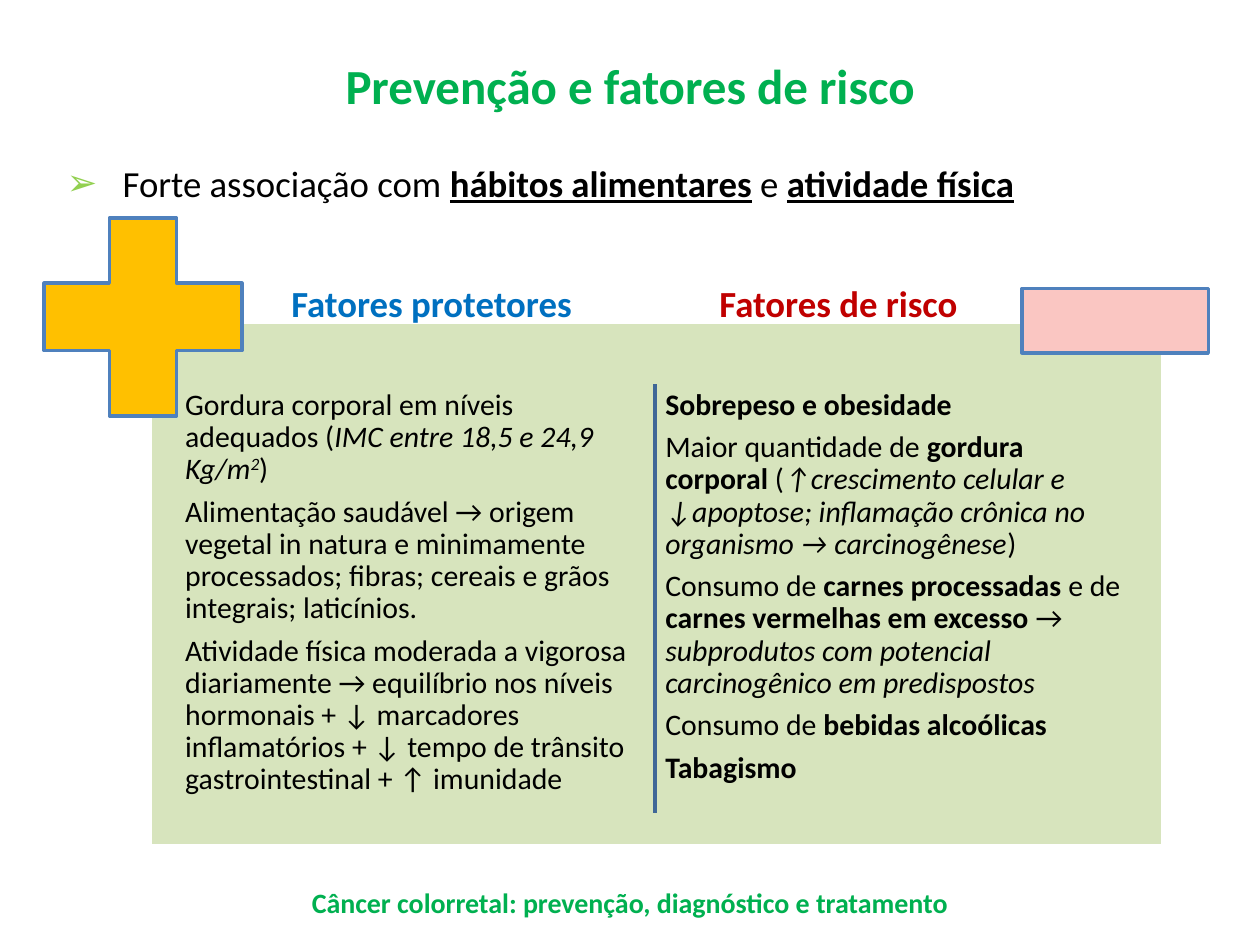
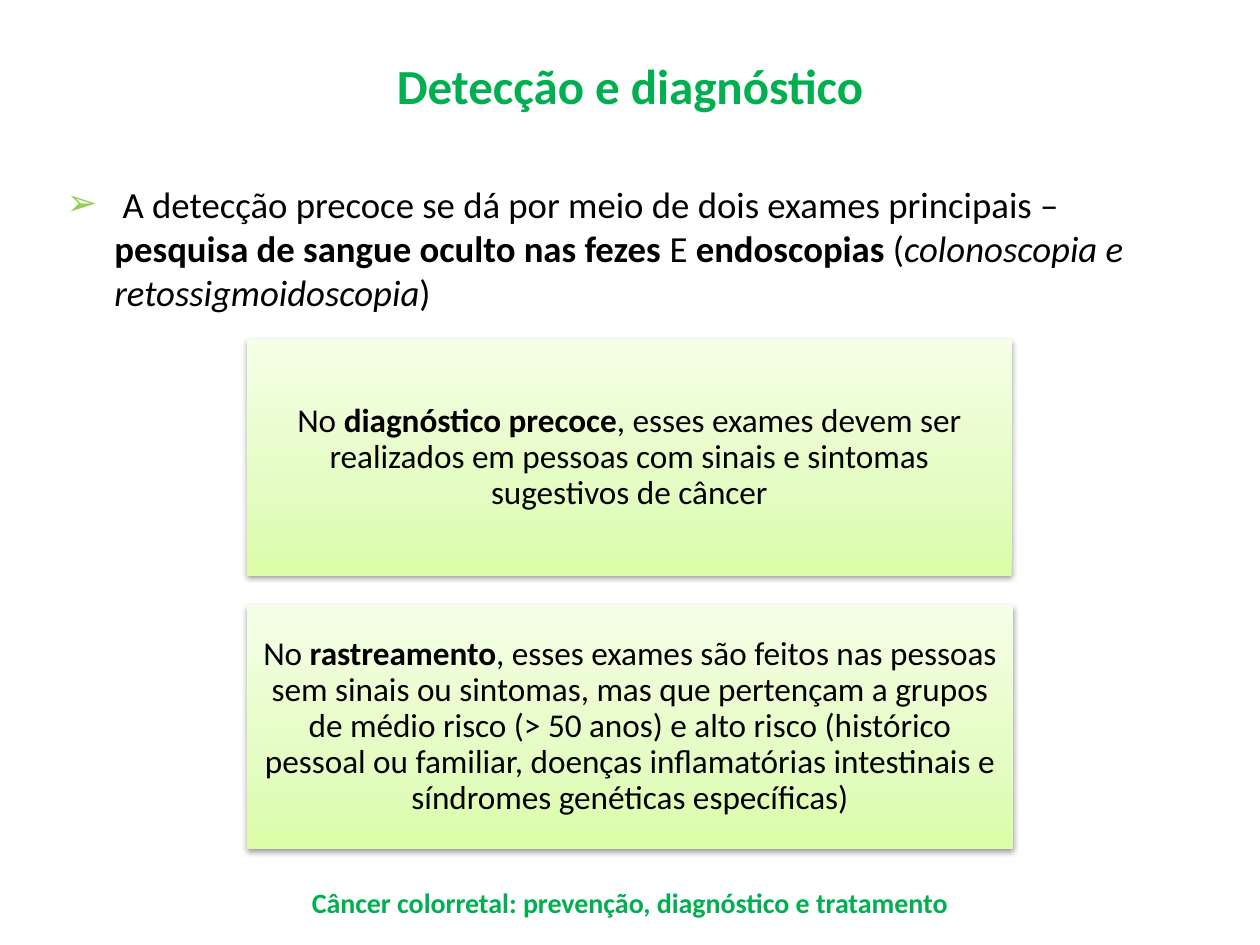
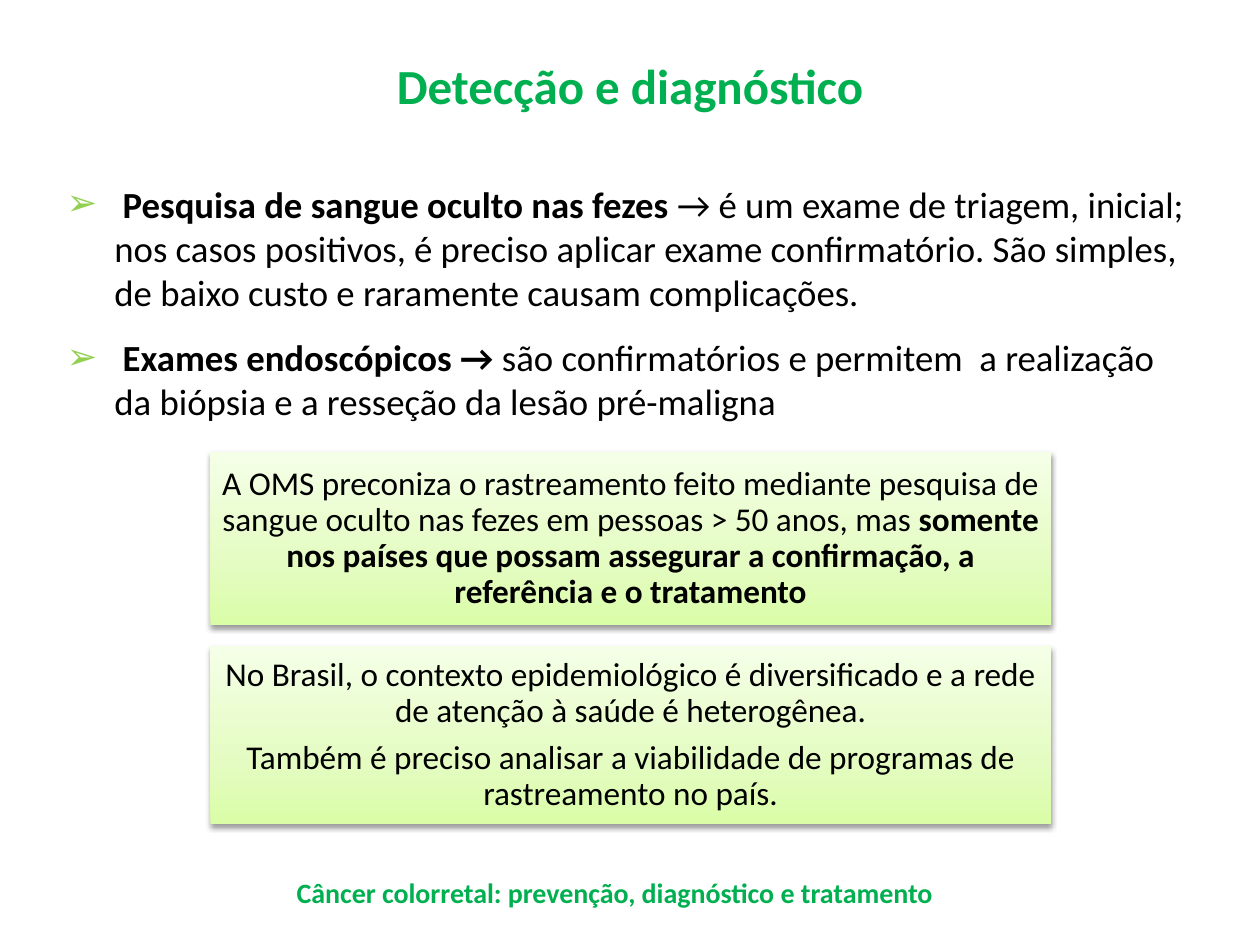
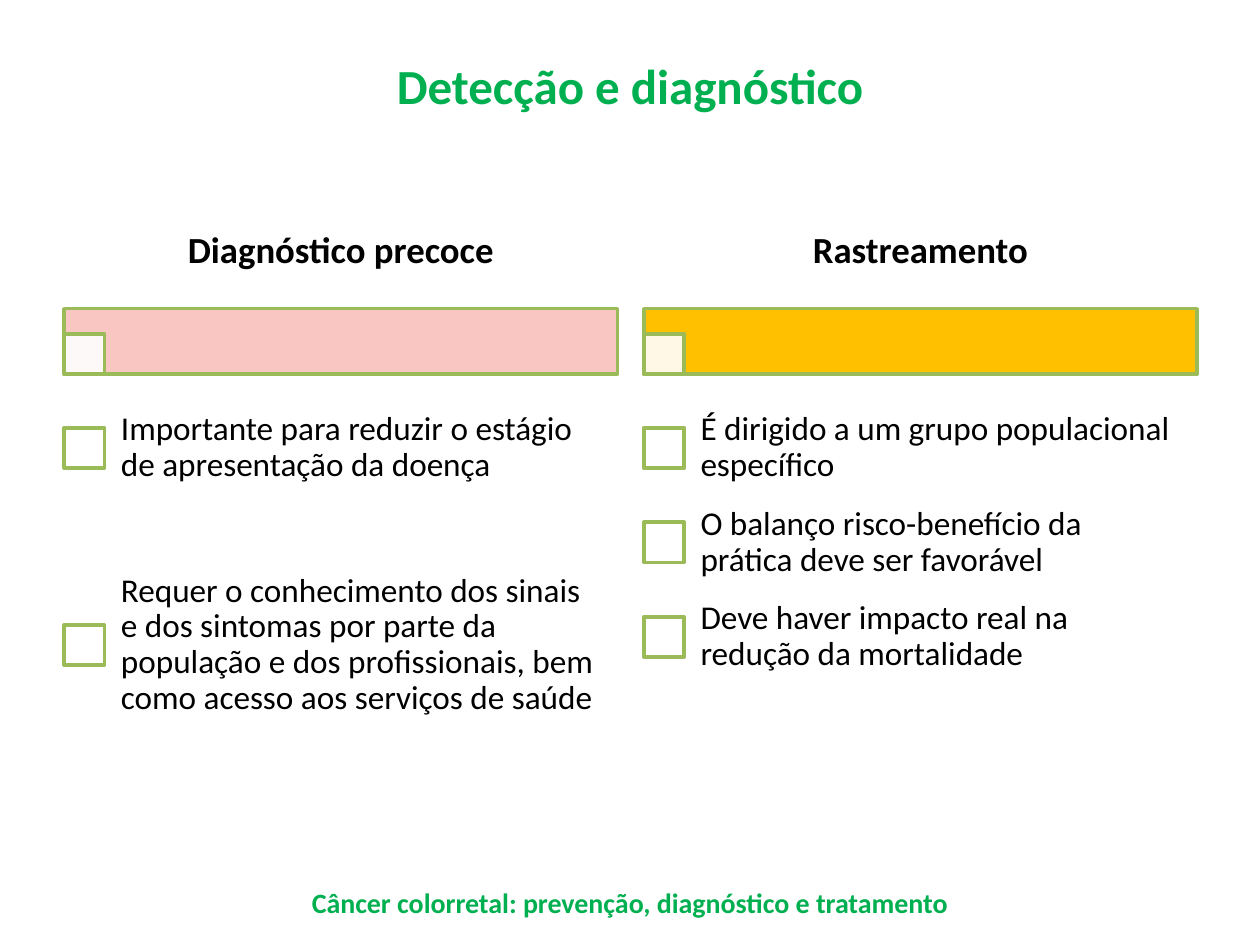
"""Builds four slides on preventing and detecting colorectal cancer."""
from copy import deepcopy

from lxml import etree
from pptx import Presentation
from pptx.dml.color import RGBColor
from pptx.enum import shapes, text
from pptx.oxml.ns import qn
from pptx.util import Inches, Pt

BLACK = RGBColor(0x00, 0x00, 0x00)
WHITE = RGBColor(0xFF, 0xFF, 0xFF)
GREEN = RGBColor(0x00, 0xB0, 0x50)
LIME = RGBColor(0x92, 0xD0, 0x50)
OLIVE = RGBColor(0x9B, 0xBB, 0x59)
SAGE = RGBColor(0xD7, 0xE4, 0xBD)
AMBER = RGBColor(0xFF, 0xC0, 0x00)
PINK = RGBColor(0xFA, 0xC6, 0xC2)
BLUE = RGBColor(0x00, 0x70, 0xC0)
RED = RGBColor(0xC0, 0x00, 0x00)
OUTLINE = RGBColor(0x4F, 0x81, 0xBD)
DIVIDER = RGBColor(0x3F, 0x67, 0x97)
CARD_STOPS = [
    (0, RGBColor(0xDA, 0xFD, 0xA7)),
    (0.35, RGBColor(0xE4, 0xFC, 0xC2)),
    (1, RGBColor(0xF5, 0xFF, 0xE7)),
]
FONT = "Calibri"
FOOTER = "Câncer colorretal: prevenção, diagnóstico e tratamento"
LEFT, CENTER = text.PP_ALIGN.LEFT, text.PP_ALIGN.CENTER
TOP, MIDDLE = text.MSO_ANCHOR.TOP, text.MSO_ANCHOR.MIDDLE
RECTANGLE = shapes.MSO_SHAPE.RECTANGLE


def write(shape, paragraphs, size, color=BLACK, align=LEFT, anchor=TOP,
          inset=(0.1, 0.05), leading=1, bullet=None):
    """Fill a shape with paragraphs of (words, style letters) runs."""
    frame = shape.text_frame
    frame.word_wrap = True
    frame.vertical_anchor = anchor
    frame.margin_left = frame.margin_right = Inches(inset[0])
    frame.margin_top = frame.margin_bottom = Inches(inset[1])
    for index, runs in enumerate(paragraphs):
        paragraph = frame.add_paragraph() if index else frame.paragraphs[0]
        paragraph.alignment = align
        paragraph.line_spacing = leading
        paragraph.space_after = Pt(6)
        if bullet:
            if index:
                paragraph.space_before = Pt(6)
            properties = paragraph._p.get_or_add_pPr()
            properties.set("marL", str(Inches(0.38)))
            properties.set("indent", str(-Inches(0.38)))
            bullet_color = etree.SubElement(properties, qn("a:buClr"))
            etree.SubElement(bullet_color, qn("a:srgbClr"), val=str(LIME))
            etree.SubElement(properties, qn("a:buFont"), typeface="Wingdings" if bullet == "Ø" else FONT)
            etree.SubElement(properties, qn("a:buChar"), char=bullet)
        paragraph.font.name = FONT
        paragraph.font.size = Pt(size)
        paragraph.font.color.rgb = color
        all_bold = all("b" in style for _, style in runs)
        paragraph.font.bold = all_bold
        for words, style in runs:
            run = paragraph.add_run()
            run.text = words
            if "b" in style and not all_bold:
                run.font.bold = True
            if "i" in style:
                run.font.italic = True
            if "u" in style:
                run.font.underline = True
            if "^" in style:
                run._r.get_or_add_rPr().set("baseline", "30000")


def block(slide, box, fill, line=None, preset=RECTANGLE):
    """Add a flat shape with a plain fill and an optional outline."""
    shape = slide.shapes.add_shape(preset, *map(Inches, box))
    shape.shadow.inherit = False
    shape.fill.solid()
    shape.fill.fore_color.rgb = fill
    if line is None:
        shape.line.fill.background()
    else:
        shape.line.color.rgb = line
        shape.line.width = Pt(2)
    return shape


deck = Presentation()
deck.slide_width, deck.slide_height = Inches(10), Inches(7.5)

pages = []
for heading, footer_left, footer_top in [
    ("Prevenção e fatores de risco", 0.12, 6.98),
    ("Detecção e diagnóstico", 0.12, 6.98),
    ("Detecção e diagnóstico", 0, 6.9),
    ("Detecção e diagnóstico", 0.12, 6.98),
]:
    page = deck.slides.add_slide(deck.slide_layouts[6])
    title = page.shapes.add_textbox(Inches(0.5), Inches(0.05), Inches(9), Inches(1.25))
    write(title, [[(heading, "b")]], 28, GREEN, CENTER, MIDDLE)
    footer = page.shapes.add_textbox(
        Inches(footer_left), Inches(footer_top), Inches(9.76), Inches(0.44))
    write(footer, [[(FOOTER, "b")]], 16, GREEN, CENTER)
    pages.append(page)
factors, exams, screening, comparison = pages

for page, top, height, points in [
    (factors, 1.23, 0.5, [
        [(" Forte associação com ", ""), ("hábitos alimentares", "bu"), (" e ", ""),
         ("atividade física", "bu")],
    ]),
    (exams, 1.39, 1.42, [
        [(" A detecção precoce se dá por meio de dois exames principais – ", ""),
         ("pesquisa de sangue oculto nas fezes", "b"), (" E ", ""), ("endoscopias", "b"),
         (" (", ""), ("colonoscopia e retossigmoidoscopia", "i"), (")", "")],
    ]),
    (screening, 1.39, 2.28, [
        [(" Pesquisa de sangue oculto nas fezes ", "b"),
         ("→ é um exame de triagem, inicial; nos casos positivos, é preciso aplicar exame "
          "confirmatório. São simples, de baixo custo e raramente causam complicações.", "")],
        [(" Exames endoscópicos →", "b"),
         (" são confirmatórios e permitem  a realização da biópsia e a resseção da lesão "
          "pré-maligna", "")],
    ]),
]:
    body = page.shapes.add_textbox(Inches(0.43), Inches(top), Inches(9.13), Inches(height))
    write(body, points, 21, bullet="➢")

block(factors, (1.19, 2.56, 8.04, 4.15), SAGE, WHITE)
protective = [
    [("Gordura corporal em níveis adequados (", ""), ("IMC entre 18,5 e 24,9 Kg/m", "i"),
     ("2", "i^"), (")", "")],
    [("Alimentação saudável → origem vegetal in natura e minimamente processados; fibras; "
      "cereais e grãos integrais; laticínios.", "")],
    [("Atividade física moderada a vigorosa diariamente → equilíbrio nos níveis hormonais + "
      "↓ marcadores inflamatórios + ↓ tempo de trânsito gastrointestinal + ↑ imunidade", "")],
]
risky = [
    [("Sobrepeso e obesidade", "b")],
    [("Maior quantidade de ", ""), ("gordura corporal", "b"), (" (", ""),
     ("↑crescimento celular e ↓apoptose; inflamação crônica no organismo → carcinogênese", "i"),
     (")", "")],
    [("Consumo de ", ""), ("carnes processadas", "b"), (" e de ", ""),
     ("carnes vermelhas em excesso ", "b"), ("→ ", ""),
     ("subprodutos com potencial carcinogênico em predispostos", "i")],
    [("Consumo de ", ""), ("bebidas alcoólicas", "b")],
    [("Tabagismo", "b")],
]
for label, color, label_left, list_left, items in [
    ("Fatores protetores", BLUE, 1.85, 1.43, protective),
    ("Fatores de risco", RED, 5.08, 5.24, risky),
]:
    label_box = factors.shapes.add_textbox(
        Inches(label_left), Inches(2.18), Inches(3.15), Inches(0.55))
    write(label_box, [[(label, "b")]], 21, color, CENTER)
    item_box = factors.shapes.add_textbox(
        Inches(list_left), Inches(3.05), Inches(3.73), Inches(3.55))
    write(item_box, items, 17, inset=(0.04, 0.04), leading=0.9)

plus = block(factors, (0.35, 1.73, 1.57, 1.57), AMBER, OUTLINE, shapes.MSO_SHAPE.CROSS)
plus.adjustments[0] = 0.33
block(factors, (8.11, 2.29, 1.48, 0.51), PINK, OUTLINE)
divider = factors.shapes.add_connector(
    shapes.MSO_CONNECTOR.STRAIGHT, Inches(5.2), Inches(3.05), Inches(5.2), Inches(6.45))
divider.line.color.rgb = DIVIDER
divider.line.width = Pt(2)
etree.SubElement(divider._element.spPr, qn("a:effectLst"))

for page, box, message in [
    (exams, (1.96, 2.69, 6.07, 1.88), [
        [("No ", ""), ("diagnóstico precoce", "b"),
         (", esses exames devem ser realizados em pessoas com sinais e sintomas sugestivos "
          "de câncer", "")],
    ]),
    (exams, (1.96, 4.8, 6.08, 1.94), [
        [("No ", ""), ("rastreamento", "b"),
         (", esses exames são feitos nas pessoas sem sinais ou sintomas, mas que pertençam a "
          "grupos de médio risco (> 50 anos) e alto risco (histórico pessoal ou familiar, "
          "doenças inflamatórias intestinais e síndromes genéticas específicas)", "")],
    ]),
    (screening, (1.67, 3.59, 6.67, 1.37), [
        [("A OMS preconiza o rastreamento feito mediante pesquisa de sangue oculto nas fezes "
          "em pessoas > 50 anos, mas ", ""),
         ("somente nos países que possam assegurar a confirmação, a referência e o "
          "tratamento", "b")],
    ]),
    (screening, (1.67, 5.13, 6.67, 1.41), [
        [("No Brasil, o contexto epidemiológico é diversificado e a rede de atenção à saúde é "
          "heterogênea.", "")],
        [("Também é preciso analisar a viabilidade de programas de rastreamento no país.", "")],
    ]),
]:
    card = block(page, box, WHITE)
    card.fill.gradient()
    card.fill.gradient_angle = 90
    stop_list = card._element.spPr.find(qn("a:gradFill")).find(qn("a:gsLst"))
    stop_list.insert(1, deepcopy(stop_list[0]))
    for stop, (position, color) in zip(card.fill.gradient_stops, CARD_STOPS):
        stop.position = position
        stop.color.rgb = color
    effects = card._element.spPr.find(qn("a:effectLst"))
    shadow = etree.SubElement(effects, qn("a:outerShdw"), blurRad=str(Pt(3.1)),
                              dist=str(Pt(1.6)), dir="5400000", rotWithShape="0")
    shade = etree.SubElement(shadow, qn("a:srgbClr"), val=str(BLACK))
    etree.SubElement(shade, qn("a:alpha"), val="38000")
    write(card, message, 19, align=CENTER, anchor=MIDDLE, inset=(0.08, 0.08), leading=0.9)

for left, heading, color, items in [
    (0.51, "Diagnóstico precoce", PINK, [
        (0.75, "Importante para reduzir o estágio de apresentação da doença"),
        (2.38, "Requer o conhecimento dos sinais e dos sintomas por parte da população e dos "
               "profissionais, bem como acesso aos serviços de saúde"),
    ]),
    (5.11, "Rastreamento", AMBER, [
        (0.75, "É dirigido a um grupo populacional específico"),
        (0.75, "O balanço risco-benefício da prática deve ser favorável"),
        (0.75, "Deve haver impacto real na redução da mortalidade"),
    ]),
]:
    block(comparison, (left, 2.45, 4.39, 0.52), color, OLIVE)
    tab = block(comparison, (left, 2.65, 0.32, 0.32), WHITE, OLIVE)
    tab_color = tab._element.spPr.find(qn("a:solidFill"))[0]
    etree.SubElement(tab_color, qn("a:alpha"), val="90000")
    heading_box = comparison.shapes.add_textbox(
        Inches(left), Inches(1.53), Inches(4.39), Inches(0.93))
    write(heading_box, [[(heading, "b")]], 21, align=CENTER, anchor=MIDDLE,
          inset=(0.04, 0.03), leading=0.9)
    top = 3.18
    for height, item in items:
        block(comparison, (left, top + height / 2 - 0.16, 0.32, 0.32), WHITE, OLIVE)
        item_box = comparison.shapes.add_textbox(
            Inches(left + 0.3), Inches(top), Inches(4.08), Inches(height))
        write(item_box, [[(item, "")]], 19, anchor=MIDDLE, inset=(0.15, 0.15), leading=0.9)
        top += height

deck.save("out.pptx")
